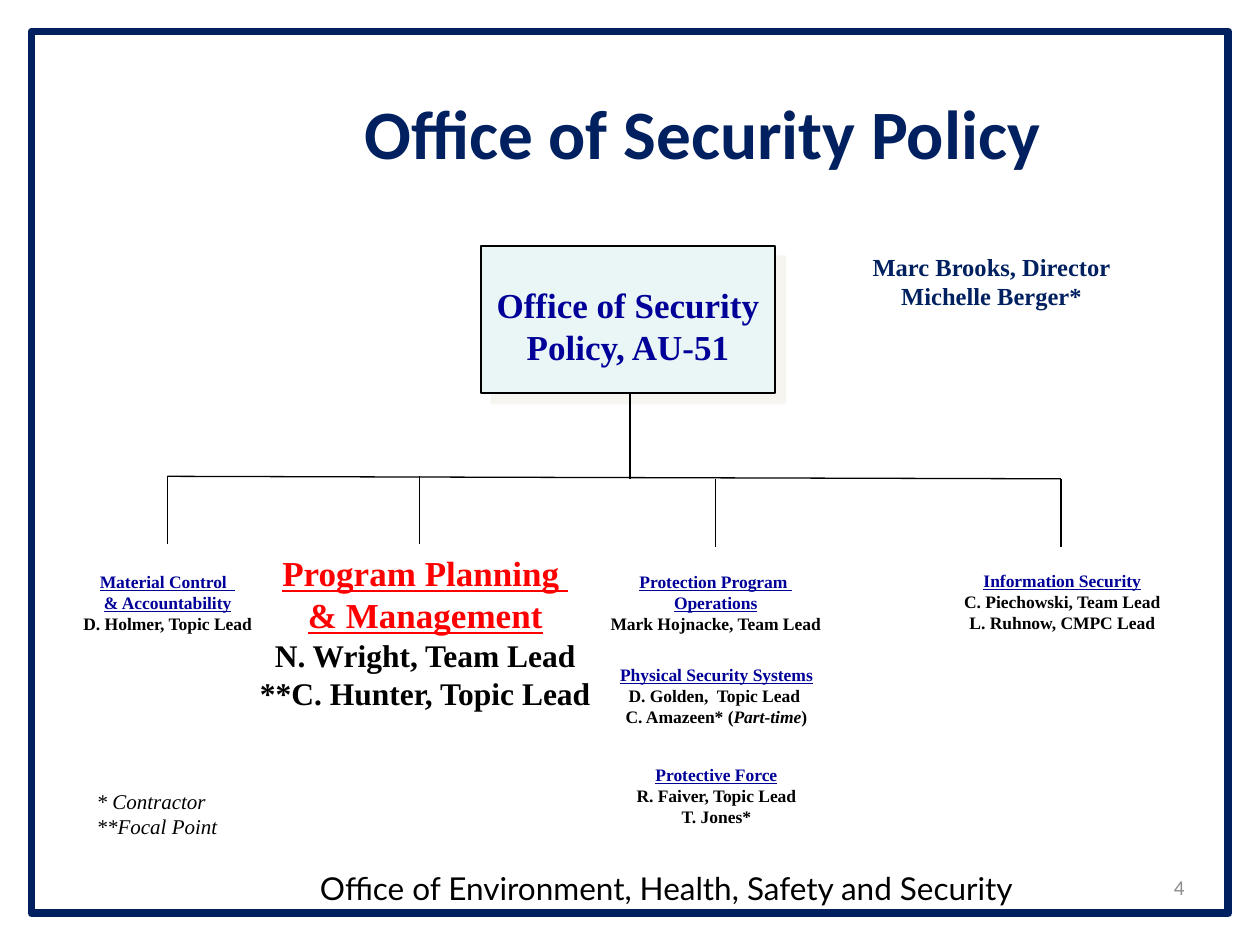
from lxml import etree
from pptx import Presentation
from pptx.dml.color import RGBColor
from pptx.enum.shapes import MSO_CONNECTOR, MSO_SHAPE
from pptx.enum.text import MSO_ANCHOR, PP_ALIGN
from pptx.oxml.ns import qn
from pptx.util import Pt

LEFT, CENTER, RIGHT = PP_ALIGN.LEFT, PP_ALIGN.CENTER, PP_ALIGN.RIGHT
TOP, MIDDLE = MSO_ANCHOR.TOP, MSO_ANCHOR.MIDDLE
RECTANGLE = MSO_SHAPE.RECTANGLE
STRAIGHT = MSO_CONNECTOR.STRAIGHT

NAVY = RGBColor(0x00, 0x20, 0x60)
BLUE = RGBColor(0x00, 0x00, 0x99)
RED = RGBColor(0xFF, 0x00, 0x00)
BLACK = RGBColor(0x00, 0x00, 0x00)
GRAY = RGBColor(0x8C, 0x8C, 0x8C)
PALE = RGBColor(0xEA, 0xF5, 0xF6)
SHADOW = "EEECE1"

SERIF = "Times New Roman"
HANGING = 27

HEADING = {"name": SERIF, "size": Pt(10), "bold": True, "underline": True, "color": BLUE}
MEMBER = {"name": SERIF, "size": Pt(10), "bold": True, "color": BLACK}
MEMBER_ITALIC = {**MEMBER, "italic": True}
BIG_HEADING = {**HEADING, "size": Pt(20), "color": RED}
BIG_MEMBER = {**MEMBER, "size": Pt(18)}
OFFICE = {"name": SERIF, "size": Pt(20), "bold": True, "color": BLUE}
DIRECTOR = {"name": SERIF, "size": Pt(14), "bold": True, "color": NAVY}
NOTE = {"name": SERIF, "size": Pt(12), "italic": True, "color": BLACK}
TITLE = {"name": "Calibri", "size": Pt(39.6), "bold": True, "color": NAVY}
FOOTER = {"name": "Lato", "size": Pt(18), "color": BLACK}
NUMBER = {"name": "Calibri", "size": Pt(12), "color": GRAY}

TEAMS = [
    ((283, 375.8, 252.7, 44), [
        [("Physical Security Systems", HEADING)],
        [("D. Golden,  Topic Lead ", MEMBER)],
        [("C. Amazeen* (", MEMBER), ("Part-time", MEMBER_ITALIC), (")", MEMBER)]]),
    ((27.4, 322.5, 136.8, 44), [
        [("Material Control  ", HEADING)],
        [("& Accountability", HEADING)],
        [("D. Holmer, Topic Lead", MEMBER)]]),
    ((527, 322, 160, 44), [
        [("Information Security", HEADING)],
        [("C. Piechowski, Team Lead", MEMBER)],
        [("L. Ruhnow, CMPC Lead", MEMBER)]]),
    ((331.2, 322.5, 155.5, 44), [
        [("Protection Program ", HEADING)],
        [("Operations", HEADING)],
        [("Mark Hojnacke, Team Lead", MEMBER)]]),
    ((344.9, 432.8, 128.9, 44), [
        [("Protective Force", HEADING)],
        [("R. Faiver, Topic Lead", MEMBER)],
        [("T. Jones*", MEMBER)]]),
]


def place(shape, box):
    for name, value in zip(("left", "top", "width", "height"), box):
        setattr(shape, name, Pt(value))


def format_font(font, style):
    for name, value in style.items():
        if name == "color":
            font.color.rgb = value
        else:
            setattr(font, name, value)


def write(frame, lines, align, anchor=TOP, hanging=0):
    frame.word_wrap = True
    frame.vertical_anchor = anchor
    for index, spans in enumerate(lines):
        para = frame.paragraphs[0] if index == 0 else frame.add_paragraph()
        para.alignment = align
        if index < hanging:
            properties = para._p.get_or_add_pPr()
            properties.set("marL", str(Pt(HANGING)))
            properties.set("indent", str(-Pt(HANGING)))
        for text, style in spans:
            span = para.add_run()
            span.text = text
            format_font(span.font, style)


def add_text(page, box, lines, align=CENTER, anchor=TOP, hanging=0):
    shape = page.shapes.add_textbox(*map(Pt, box))
    write(shape.text_frame, lines, align, anchor, hanging)


def add_line(page, start, end):
    line = page.shapes.add_connector(STRAIGHT, *map(Pt, start + end))
    line.line.color.rgb = BLACK
    line.line.width = Pt(0.75)
    etree.SubElement(line._element.spPr, qn("a:effectLst"))


def add_rectangle(page, box, color, width):
    shape = page.shapes.add_shape(RECTANGLE, *map(Pt, box))
    shape.shadow.inherit = False
    shape.fill.background()
    shape.line.color.rgb = color
    shape.line.width = Pt(width)
    return shape


def add_frame(page, box):
    left, top, width, height = box
    add_rectangle(page, box, NAVY, 4.5)
    add_text(page, (left + 144, top + 475.2, 437.8, 28.8),
             [[("Office of Environment, Health, Safety and Security", FOOTER)]])
    add_text(page, (left + width - 93.6, top + 474.5, 75.6, 28.8),
             [[("4", NUMBER)]], RIGHT, MIDDLE)


def add_title(page, box):
    place(page.shapes.title, box)
    write(page.shapes.title.text_frame,
          [[("Office of Security Policy", TITLE)]], CENTER, MIDDLE)


def add_office(page, box):
    left, top, width, height = box
    card = add_rectangle(page, box, BLACK, 1)
    card.fill.solid()
    card.fill.fore_color.rgb = PALE
    effects = card._element.spPr.find(qn("a:effectLst"))
    shadow = etree.SubElement(effects, qn("a:outerShdw"), dist=str(Pt(8.5)),
                              dir="2700000", algn="ctr", rotWithShape="0")
    color = etree.SubElement(shadow, qn("a:srgbClr"), val=SHADOW)
    etree.SubElement(color, qn("a:alpha"), val="50000")
    add_text(page, (left, top + 18, width, 55.4),
             [[("Office of Security Policy, AU-51", OFFICE)]])
    add_text(page, (left + width, top, 247.7, 41),
             [[("Marc Brooks, Director", DIRECTOR)], [("Michelle Berger*", DIRECTOR)]])


def add_branches(page, box):
    left, top, width, height = box
    trunk, stem, drop, slope = 264.3, 49, 38.9, 1.4
    bar = top + stem
    add_line(page, (left, bar - slope), (left + width, bar))
    add_line(page, (left + trunk, top), (left + trunk, bar))
    for offset, rise in ((0, slope), (144, slope), (313.2, 0), (width, 0)):
        start = bar - rise
        add_line(page, (left + offset, start), (left + offset, start + drop))


def add_teams(page):
    for box, lines in TEAMS:
        add_text(page, box, lines, hanging=len(lines))


def add_focus_team(page, box):
    add_text(page, box, [
        [("Program Planning ", BIG_HEADING)],
        [("& Management", BIG_HEADING)],
        [("N. Wright, Team Lead", BIG_MEMBER)],
        [("**C. Hunter, Topic Lead", BIG_MEMBER)]], hanging=2)


def add_notes_key(page, box):
    add_text(page, box, [[("* Contractor", NOTE)], [("**Focal Point", NOTE)]],
             LEFT, hanging=2)


def main():
    deck = Presentation()
    deck.slide_width, deck.slide_height = Pt(720), Pt(540)
    page = deck.slides.add_slide(deck.slide_layouts[5])
    add_frame(page, (18, 18, 684, 504))
    add_title(page, (126, 49.7, 550.8, 51.8))
    add_office(page, (275, 140.4, 167.8, 84.2))
    add_branches(page, (95.7, 224.6, 510.6, 87.9))
    add_teams(page)
    add_focus_team(page, (126, 311.8, 234, 99.4))
    add_notes_key(page, (48.2, 447.1, 115.9, 36))
    deck.save("out.pptx")


if __name__ == "__main__":
    main()
